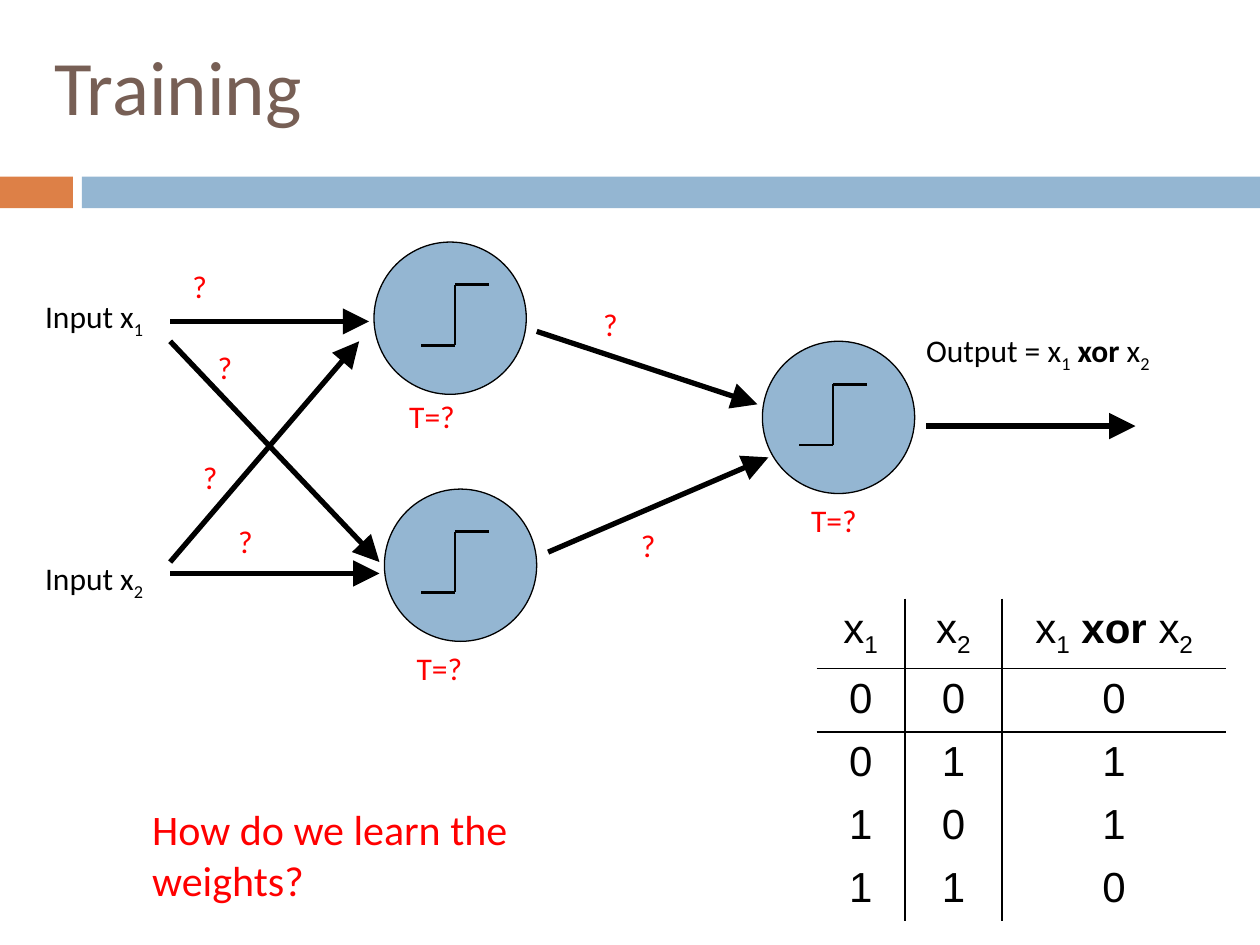
import pptx
import pptx.dml.color
import pptx.enum.shapes
import pptx.enum.text
import pptx.oxml.ns
import pptx.util
from lxml import etree
from pptx.util import Cm, Pt

BLACK, RED, BLUE, ORANGE, BROWN = "000000", "FF0000", "94B6D2", "DD8047", "775F55"
SHAPE = pptx.enum.shapes.MSO_SHAPE
ALIGN = pptx.enum.text.PP_ALIGN
ANCHOR = pptx.enum.text.MSO_ANCHOR

# Lengths are in centimetres; a run is (text, style), style being "", "sub" or "bold".
X1 = [("x", ""), ("1", "sub")]
X2 = [("x", ""), ("2", "sub")]
XOR = X1 + [(" xor ", "bold")] + X2

title = "Training"
bars = [(0, 1.47, ORANGE), (1.65, 23.75, BLUE)]  # left, width, colour
neurons = [  # circle corner, top centre of step, corner of threshold
    ((7.54, 4.88), (9.17, 5.74), (8.0, 7.87)),
    ((15.37, 6.88), (16.79, 7.75), (16.1, 9.98)),
    ((7.75, 9.86), (9.17, 10.72), (8.15, 12.95)),
]
weights = [  # start, end
    ((3.43, 6.48), (7.44, 6.48)),
    ((3.43, 6.88), (7.65, 11.33)),
    ((3.43, 11.56), (7.65, 11.56)),
    ((3.43, 11.33), (7.24, 6.88)),
    ((10.82, 6.68), (15.27, 8.15)),
    ((11.05, 11.13), (15.49, 9.22)),
    ((18.67, 8.59), (22.89, 8.59)),
]
unknown_weights = [(3.63, 5.05), (4.14, 6.68), (3.84, 8.89),
                   (4.55, 10.19), (11.91, 5.82), (12.67, 10.26)]
signals = [  # left, top, width, runs
    (0.66, 5.87, 3.18, [("Input ", "")] + X1),
    (0.66, 11.15, 3.18, [("Input ", "")] + X2),
    (18.42, 6.55, 5.59, [("Output = ", "")] + XOR),
]
question = "How do we learn the weights?"
truth_header = [X1, X2, XOR]
truth_rows = ["000", "011", "101", "110"]
truth_columns = [1.78, 1.96, 4.52]

DIAMETER, STEP_HALF, STEP_HEIGHT = 3.07, 0.69, 1.22


def color(hex_code):
    return pptx.dml.color.RGBColor.from_string(hex_code)


def add_runs(paragraph, runs, size, fill, font="Calibri"):
    for words, style in runs:
        run = paragraph.add_run()
        run.text = words
        run.font.name, run.font.size = font, Pt(size)
        run.font.color.rgb = color(fill)
        if style == "bold":
            run.font.bold = True
        if style == "sub":
            run.font._element.set("baseline", "-25000")


def add_label(slide, left, top, width, height, runs, size, fill, wrap=True):
    box = slide.shapes.add_textbox(Cm(left), Cm(top), Cm(width), Cm(height))
    box.text_frame.word_wrap = wrap
    add_runs(box.text_frame.paragraphs[0], runs, size, fill)
    return box.text_frame.paragraphs[0]


def add_filled(slide, preset, left, top, width, height, fill):
    shape = slide.shapes.add_shape(preset, Cm(left), Cm(top), Cm(width), Cm(height))
    shape.shadow.inherit = False
    shape.fill.solid()
    shape.fill.fore_color.rgb = color(fill)
    return shape


def add_line(slide, start, end, width, arrow=False):
    line = slide.shapes.add_connector(
        pptx.enum.shapes.MSO_CONNECTOR.STRAIGHT, *(Cm(v) for v in start + end))
    line.line.width = Pt(width)
    line.line.color.rgb = color(BLACK)
    if arrow:
        etree.SubElement(line.line._get_or_add_ln(), pptx.oxml.ns.qn("a:tailEnd"),
                         type="triangle", w="lg", len="lg")
    etree.SubElement(line._element.spPr, pptx.oxml.ns.qn("a:effectLst"))


def add_neuron(slide, circle, step, threshold):
    body = add_filled(slide, SHAPE.OVAL, *circle, DIAMETER, DIAMETER, BLUE)
    body.line.color.rgb = color(BLACK)
    body.line.width = Pt(0.75)
    x, top = step
    bottom = top + STEP_HEIGHT
    corners = [(x + STEP_HALF, top), (x, top), (x, bottom), (x - STEP_HALF, bottom)]
    for start, end in zip(corners, corners[1:]):
        add_line(slide, start, end, 1.5)
    add_label(slide, *threshold, 1.47, 1.02, [("T=?", "")], 18, RED, wrap=False)


def add_border(cell, side):
    qn = pptx.oxml.ns.qn
    edge = etree.SubElement(cell._tc.get_or_add_tcPr(), qn("a:ln" + side), w="12700")
    fill = etree.SubElement(edge, qn("a:solidFill"))
    etree.SubElement(fill, qn("a:srgbClr"), val=BLACK)


def add_truth_table(slide):
    rows = [truth_header] + [[[(digit, "")] for digit in row] for row in truth_rows]
    frame = slide.shapes.add_table(len(rows), len(truth_columns), Cm(16.46), Cm(12.07),
                                   Cm(sum(truth_columns)), Cm(6.48))
    table = frame.table
    table.first_row = table.horz_banding = False
    style_id = frame._element.find(".//" + pptx.oxml.ns.qn("a:tableStyleId"))
    style_id.text = "{2D5ABB26-0587-4C30-8999-92F81FD0307C}"  # no style, no grid
    for column, width in zip(table.columns, truth_columns):
        column.width = Cm(width)
    for r, row in enumerate(rows):
        table.rows[r].height = Cm(1.27 if r else 1.4)
        for c, runs in enumerate(row):
            cell = table.cell(r, c)
            sides = {"L": c > 0, "R": c < len(row) - 1, "T": r == 1, "B": r == 0}
            for side, drawn in sides.items():
                if drawn:
                    add_border(cell, side)
            cell.fill.background()
            paragraph = cell.text_frame.paragraphs[0]
            paragraph.alignment = ALIGN.CENTER
            add_runs(paragraph, runs, 24, BLACK, "Arial")


def main():
    deck = pptx.Presentation()
    deck.slide_width, deck.slide_height = Cm(25.4), Cm(19.05)
    slide = deck.slides.add_slide(deck.slide_layouts[5])

    for left, width, fill in bars:
        add_filled(slide, SHAPE.RECTANGLE, left, 3.56, width, 0.64, fill).line.fill.background()

    heading = slide.shapes.title
    heading.left, heading.top, heading.width, heading.height = (
        Cm(0.84), Cm(-0.2), Cm(22.86), Cm(3.81))
    heading.text_frame.vertical_anchor = ANCHOR.MIDDLE
    heading.text_frame.paragraphs[0].alignment = ALIGN.LEFT
    add_runs(heading.text_frame.paragraphs[0], [(title, "")], 44, BROWN)

    for neuron in neurons:
        add_neuron(slide, *neuron)
    for start, end in weights:
        add_line(slide, start, end, 3, arrow=True)
    for left, top in unknown_weights:
        mark = add_label(slide, left, top, 0.81, 1.3, [("?", "")], 18, RED)
        add_runs(mark, [(" ", "")], 24, RED)
    for left, top, width, runs in signals:
        add_label(slide, left, top, width, 1.02, runs, 18, BLACK)
    add_truth_table(slide)
    add_label(slide, 2.82, 16.08, 10.6, 1.27, [(question, "")], 24, RED)
    deck.save("out.pptx")


if __name__ == "__main__":
    main()
